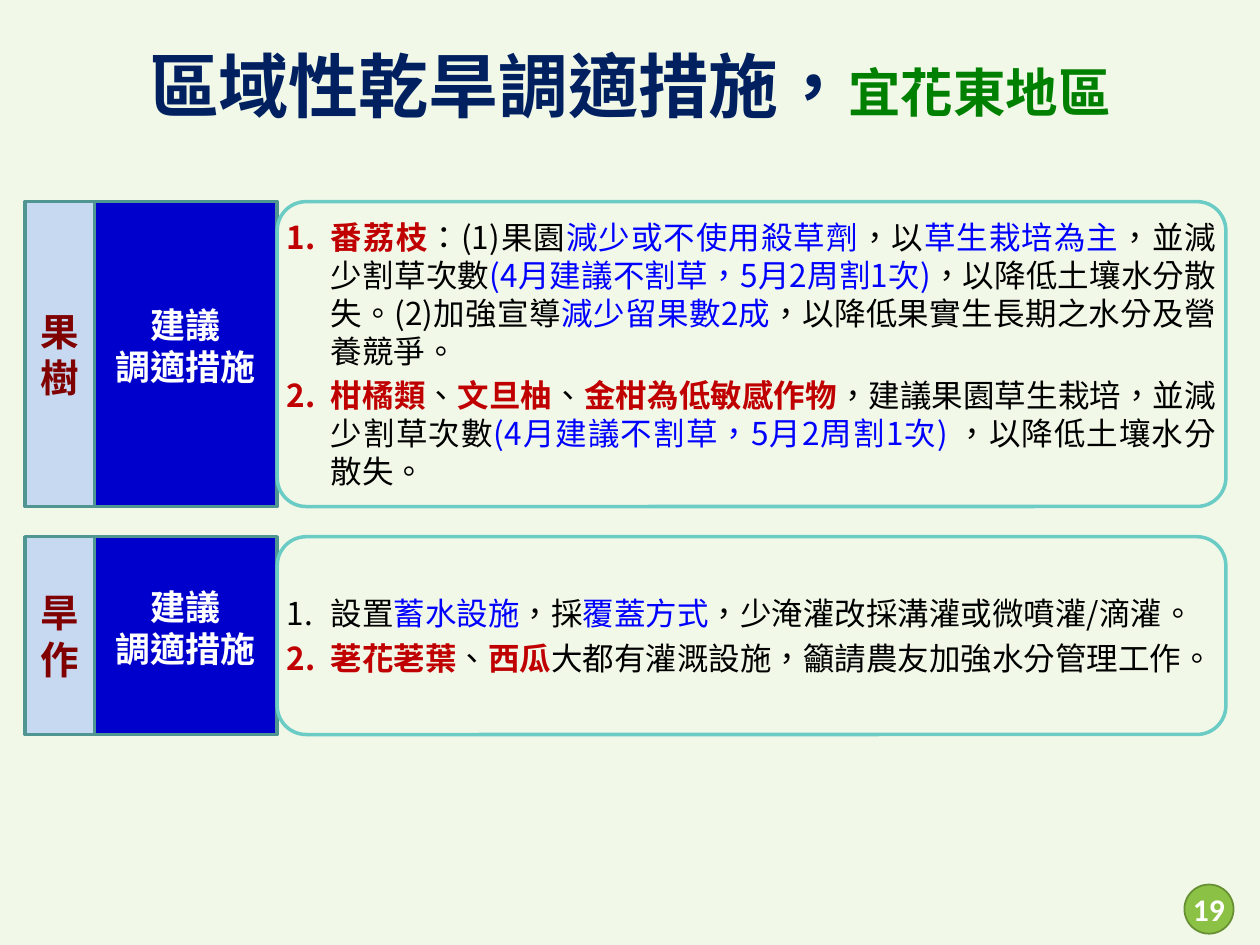
from dataclasses import dataclass

from lxml.etree import SubElement
from pptx import Presentation
from pptx.dml.color import RGBColor
from pptx.enum.shapes import MSO_SHAPE
from pptx.enum.text import MSO_ANCHOR, PP_ALIGN
from pptx.oxml.ns import qn
from pptx.util import Inches, Pt

COLORS = {
    "background": "F1F8E8", "navy": "002060", "green": "008000",
    "blue": "0000CC", "pale": "C6D9F1", "edge": "4F9692", "teal": "6BCBC5",
    "maroon": "800000", "white": "FFFFFF", "badge": "8BC145", "badge_edge": "678F33",
    "crop": "C00000", "action": "0000FF", "plain": "000000",
}
CJK = "Noto Sans CJK SC"


@dataclass(frozen=True)
class Span:
    text: str
    color: str = "plain"
    size: float = 18
    bold: bool = False
    font: str = CJK


@dataclass(frozen=True)
class Section:
    category: str
    top: float
    height: float
    label_top: float
    measures: list[list[Span]]


def crop(text: str) -> Span:
    return Span(text, "crop", bold=True)


def action(text: str) -> Span:
    return Span(text, "action")


SECTIONS = [
    Section("果樹", 1.6, 2.42, 2.36, [
        [crop("番荔枝"), Span("：(1)果園"), action("減少或不使用殺草劑"), Span("，以"),
         action("草生栽培為主"), Span("，並減少割草次數"),
         action("(4月建議不割草，5月2周割1次)"),
         Span("，以降低土壤水分散失。(2)加強宣導"), action("減少留果數2成"),
         Span("，以降低果實生長期之水分及營養競爭。")],
        [crop("柑橘類"), Span("、"), crop("文旦柚"), Span("、"), crop("金柑為低敏感作物"),
         Span("，建議果園草生栽培，並減少割草次數"),
         action("(4月建議不割草，5月2周割1次) "), Span("，以降低土壤水分散失。")],
    ]),
    Section("旱作", 4.26, 1.57, 4.6, [
        [Span("設置"), action("蓄水設施"), Span("，採"), action("覆蓋方式"),
         Span("，少淹灌改採溝灌或微噴灌/滴灌。")],
        [crop("荖花荖葉"), Span("、"), crop("西瓜"),
         Span("大都有灌溉設施，籲請農友加強水分管理工作。")],
    ]),
]


def rgb(name: str) -> RGBColor:
    return RGBColor.from_string(COLORS[name])


def write(paragraph, spans: list[Span], align=PP_ALIGN.CENTER) -> None:
    paragraph.alignment = align
    for span in spans:
        run = paragraph.add_run()
        run.text = span.text
        run.font.name = span.font
        run.font.size = Pt(span.size)
        run.font.bold = span.bold
        run.font.color.rgb = rgb(span.color)
        properties = run._r.get_or_add_rPr()
        properties.set("lang", "zh-TW")
        SubElement(properties, qn("a:ea")).set("typeface", CJK)


def number(paragraph) -> None:
    paragraph.space_after = Pt(4)
    properties = paragraph._p.get_or_add_pPr()
    properties.set("marL", str(Inches(0.35)))
    properties.set("indent", str(-Inches(0.35)))
    SubElement(properties, qn("a:buFont")).set("typeface", "+mj-lt")
    SubElement(properties, qn("a:buAutoNum")).set("type", "arabicPeriod")


def add_box(slide, kind, left: float, top: float, width: float, height: float,
            fill: str | None, line: str, weight: float = 2):
    box = slide.shapes.add_shape(
        kind, Inches(left), Inches(top), Inches(width), Inches(height))
    box.shadow.inherit = False
    if fill:
        box.fill.solid()
        box.fill.fore_color.rgb = rgb(fill)
    else:
        box.fill.background()
    box.line.color.rgb = rgb(line)
    box.line.width = Pt(weight)
    box.text_frame.word_wrap = True
    box.text_frame.vertical_anchor = MSO_ANCHOR.MIDDLE
    return box


def set_margins(frame, margin: float) -> None:
    frame.margin_left = frame.margin_right = Inches(margin)
    frame.margin_top = frame.margin_bottom = Inches(margin)


def add_section(slide, section: Section) -> None:
    top, height = section.top, section.height
    add_box(slide, MSO_SHAPE.RECTANGLE, 0.75, top, 1.45, height, "blue", "edge")
    label = slide.shapes.add_textbox(
        Inches(0.81), Inches(section.label_top), Inches(1.32), Inches(0.77)).text_frame
    label.word_wrap = False
    for index, text in enumerate(["建議", "調適措施"]):
        paragraph = label.add_paragraph() if index else label.paragraphs[0]
        write(paragraph, [Span(text, "white", 20, True, "Arial")])

    category = add_box(slide, MSO_SHAPE.RECTANGLE, 0.2, top, 0.55, height, "pale", "edge")
    write(category.text_frame.paragraphs[0],
          [Span(section.category, "maroon", 22, True, "Arial")])

    panel = add_box(slide, MSO_SHAPE.ROUNDED_RECTANGLE, 2.2, top, 7.53, height, None, "teal")
    panel.adjustments[0] = 0.23 / height
    frame = panel.text_frame
    set_margins(frame, 0.01)
    for index, spans in enumerate(section.measures):
        paragraph = frame.add_paragraph() if index else frame.paragraphs[0]
        write(paragraph, spans, PP_ALIGN.JUSTIFY)
        number(paragraph)


def main() -> None:
    """Build the slide on regional drought adaptation measures."""
    deck = Presentation()
    deck.slide_width, deck.slide_height = Inches(10), Inches(7.5)
    slide = deck.slides.add_slide(deck.slide_layouts[6])
    slide.background.fill.solid()
    slide.background.fill.fore_color.rgb = rgb("background")

    title = slide.shapes.add_textbox(
        Inches(0), Inches(0.29), Inches(10), Inches(0.77)).text_frame
    title.word_wrap = True
    write(title.paragraphs[0], [Span("區域性乾旱調適措施，", "navy", 40, True),
                                Span("宜花東地區", "green", 30, True)])

    for section in SECTIONS:
        add_section(slide, section)

    badge = add_box(slide, MSO_SHAPE.OVAL, 9.4, 7.02, 0.39, 0.39, "badge", "badge_edge", 1)
    set_margins(badge.text_frame, 0)
    badge.text_frame.word_wrap = False
    write(badge.text_frame.paragraphs[0], [Span("19", "white", 18, True, "Calibri")])

    deck.save("out.pptx")


if __name__ == "__main__":
    main()
